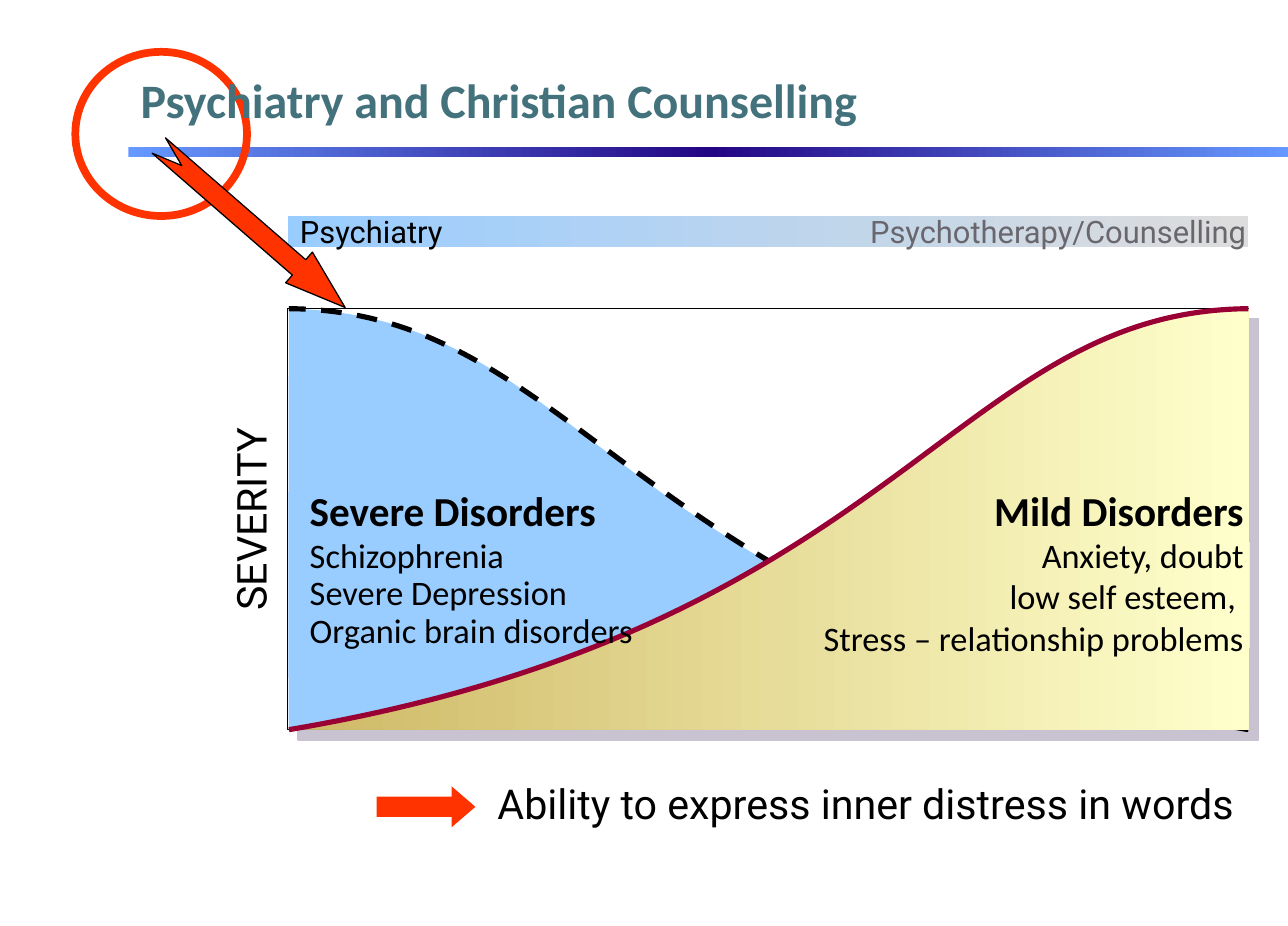
from copy import deepcopy

from lxml import etree
from pptx import Presentation
from pptx.dml.color import RGBColor
from pptx.enum.dml import MSO_LINE
from pptx.enum.shapes import MSO_SHAPE
from pptx.enum.text import MSO_ANCHOR, PP_ALIGN
from pptx.oxml.ns import qn
from pptx.util import Inches, Pt

RECTANGLE, ELLIPSE = MSO_SHAPE.RECTANGLE, MSO_SHAPE.OVAL
ARROW, NOTCHED_ARROW = MSO_SHAPE.RIGHT_ARROW, MSO_SHAPE.NOTCHED_RIGHT_ARROW
LEFT, RIGHT = PP_ALIGN.LEFT, PP_ALIGN.RIGHT
TOP, MIDDLE = MSO_ANCHOR.TOP, MSO_ANCHOR.MIDDLE
DASH = MSO_LINE.DASH

BLACK, SIGNAL_RED, SKY = "000000", "FF3300", "99CCFF"
CHART_LEFT, CHART_TOP, CHART_WIDTH, CHART_HEIGHT = 2.33, 2.5, 7.78, 3.41
CHART_BOTTOM = CHART_TOP + CHART_HEIGHT
CURVE_LEFT, CURVE_RIGHT = 2.34, 10.11
MIRROR_SUM = CURVE_LEFT + CURVE_RIGHT


def color(value):
    return RGBColor.from_string(value)


def mirror(points):
    """Swap left and right about the middle of the chart."""
    return [(MIRROR_SUM - x, y) for x, y in points]


class SlideBuilder:
    heading_font = "Calibri"
    label_font = "Roboto"

    def __init__(self, page):
        self.page = page

    def paint(self, shape, fill, line, weight, dash=None):
        """Apply a solid fill, a gradient (list of colours) or no fill, and the line."""
        shape.shadow.inherit = False
        if fill is None:
            shape.fill.background()
        elif isinstance(fill, str):
            shape.fill.solid()
            shape.fill.fore_color.rgb = color(fill)
        else:
            self.paint_gradient(shape, fill)
        if line is None:
            shape.line.fill.background()
        else:
            shape.line.color.rgb = color(line)
            shape.line.width = Pt(weight)
            if dash is not None:
                shape.line.dash_style = dash

    def paint_gradient(self, shape, colors):
        shape.fill.gradient()
        shape.fill.gradient_angle = 0
        stop_list = next(shape._element.iter(qn("a:gsLst")))
        for _ in colors[2:]:
            stop_list.append(deepcopy(stop_list[0]))
        for index, stop in enumerate(shape.fill.gradient_stops):
            stop.color.rgb = color(colors[index])
            stop.position = index / (len(colors) - 1)

    def shape(self, kind, left, top, width, height, fill=None, line=None,
              weight=0.75, rotation=0, adjustments=()):
        shape = self.page.shapes.add_shape(
            kind, Inches(left), Inches(top), Inches(width), Inches(height))
        self.paint(shape, fill, line, weight)
        shape.rotation = rotation
        for index, value in enumerate(adjustments):
            shape.adjustments[index] = value
        return shape

    def curve(self, points, closed, fill=None, line=None, weight=0.75, dash=None):
        """Draw Bézier curves; after the start, every three points make one curve."""
        start, *controls = [(Inches(x), Inches(y)) for x, y in points]
        builder = self.page.shapes.build_freeform(*start)
        builder.add_line_segments(controls, close=closed)
        shape = builder.convert_to_shape()
        segments = list(shape._element.iter(qn("a:lnTo")))
        for first in range(0, len(segments), 3):
            bezier = etree.Element(qn("a:cubicBezTo"))
            segments[first].addprevious(bezier)
            for segment in segments[first:first + 3]:
                bezier.append(segment[0])
                segment.getparent().remove(segment)
        self.paint(shape, fill, line, weight, dash)

    def drop_shadow(self, shape, shade, distance, angle):
        effects = shape._element.spPr.find(qn("a:effectLst"))
        shadow = etree.SubElement(effects, qn("a:outerShdw"), dist=str(Pt(distance)),
                                  dir=str(angle * 60000), algn="ctr", rotWithShape="0")
        etree.SubElement(shadow, qn("a:srgbClr"), val=shade)

    def text(self, left, top, width, height, lines, size, font=label_font, ink=BLACK,
             bold=False, align=LEFT, spacing=1.0, anchor=TOP, rotation=0):
        box = self.page.shapes.add_textbox(
            Inches(left), Inches(top), Inches(width), Inches(height))
        box.rotation = rotation
        frame = box.text_frame
        frame.word_wrap = True
        frame.vertical_anchor = anchor
        frame.text = "\n".join(lines)
        for para in frame.paragraphs:
            para.alignment = align
            para.line_spacing = spacing
            para.font.size = Pt(size)
            para.font.name = font
            para.font.bold = bold
            para.font.color.rgb = color(ink)
        return frame

    def disorders(self, left, width, height, lines, align, spacing, gap):
        """Write a bold heading followed by smaller lines."""
        frame = self.text(left, 3.96, width, height, lines, 20, self.heading_font,
                          align=align, spacing=spacing)
        heading, *examples = frame.paragraphs
        heading.line_spacing = 0.8
        heading.font.size = Pt(24)
        heading.font.bold = True
        for para in examples:
            para.space_before = Pt(gap)


def main():
    deck = Presentation()
    deck.slide_width, deck.slide_height = Inches(10.43), Inches(7.5)
    slide = SlideBuilder(deck.slides.add_slide(deck.slide_layouts[6]))

    slide.shape(RECTANGLE, 1.04, 1.19, 9.43, 0.08, ["6699FF", "240684", "6699FF"])

    slide.shape(RECTANGLE, CHART_LEFT, 1.75, CHART_WIDTH, 0.25, [SKY, "DDDDDD"])
    slide.text(2.33, 1.67, 2.81, 0.4, ["Psychiatry"], 18)
    slide.text(6.1, 1.67, 4.09, 0.4, ["Psychotherapy/Counselling"], 18,
               ink="69676D", align=RIGHT)

    chart = slide.shape(RECTANGLE, CHART_LEFT, CHART_TOP, CHART_WIDTH, CHART_HEIGHT,
                        "FFFFFF", BLACK)
    slide.drop_shadow(chart, "C9C2D1", 8.5, 45)

    top_corner = (CURVE_LEFT, CHART_TOP)
    low_corner = (CURVE_LEFT, CHART_BOTTOM)
    far_corner = (CURVE_RIGHT, CHART_BOTTOM)
    severe_area = [low_corner, low_corner, (2.33, 5.81), top_corner,
                   (4.8, 2.55), (4.83, 4.92), far_corner,
                   (6.23, CHART_BOTTOM), low_corner, low_corner]
    severe_curve = [far_corner, (5.15, 5.07), (4.72, 2.52), top_corner]
    slide.curve(severe_area, True, fill=SKY)
    slide.curve(severe_curve, False, line=BLACK, weight=3, dash=DASH)

    slide.shape(ARROW, 3.05, 6.37, 0.8, 0.33, SIGNAL_RED, adjustments=(0.5, 0.58))
    slide.text(3.93, 6.33, 6.18, 0.42, ["Ability to express inner distress in words"],
               24, spacing=0.8)

    slide.curve(mirror(severe_area), True, fill=["CEB966", "FFFFCC"])
    slide.curve(mirror(severe_curve), False, line="990033", weight=3)

    slide.disorders(2.41, 3.12, 1.47, ["Severe Disorders", "Schizophrenia",
                                       "Severe Depression", "Organic brain disorders"],
                    LEFT, 0.5, 10)
    slide.disorders(6.39, 3.78, 1.43, ["Mild Disorders", "Anxiety, doubt",
                                       "low self esteem, ",
                                       "Stress – relationship problems"], RIGHT, 1.0, 0)
    slide.text(0.91, 3.66, 2.33, 0.44, ["SEVERITY"], 24, spacing=0.8, rotation=270)

    slide.shape(ELLIPSE, 0.61, 0.42, 1.39, 1.33, line=SIGNAL_RED, weight=4.5)
    slide.shape(NOTCHED_ARROW, 1.04, 1.67, 2, 0.33, SIGNAL_RED, BLACK,
                rotation=41, adjustments=(0.5, 1.5))
    slide.text(1.04, 0.44, 9.02, 0.72, ["Psychiatry and Christian Counselling"], 28,
               slide.heading_font, "43727D", bold=True, anchor=MIDDLE)

    deck.save("out.pptx")


if __name__ == "__main__":
    main()
